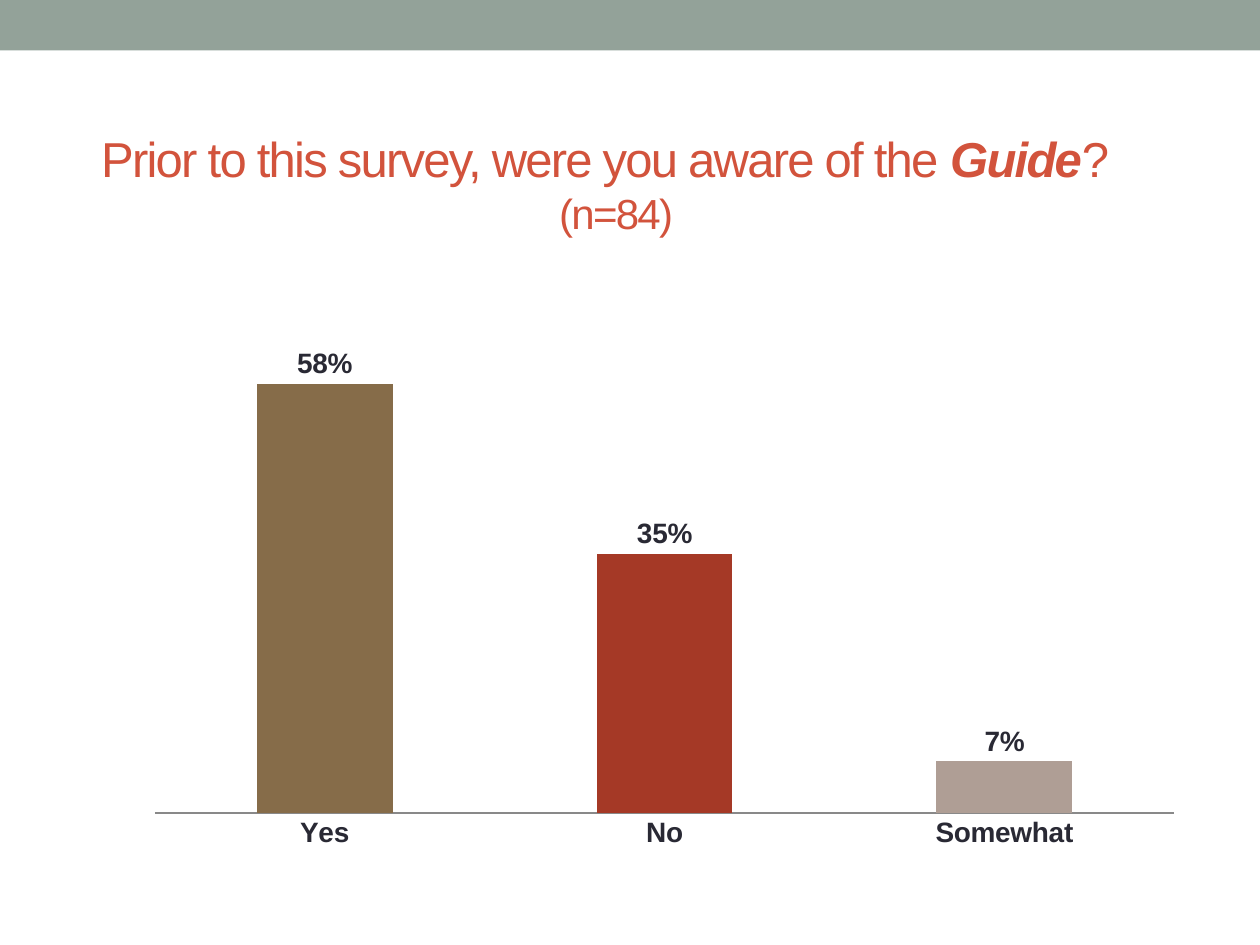
from lxml.etree import SubElement
from pptx import Presentation
from pptx.chart.data import CategoryChartData
from pptx.dml.color import RGBColor
from pptx.enum.chart import XL_CHART_TYPE, XL_LABEL_POSITION, XL_TICK_MARK
from pptx.enum.shapes import MSO_SHAPE
from pptx.enum.text import MSO_ANCHOR, MSO_AUTO_SIZE, PP_ALIGN
from pptx.oxml.ns import qn
from pptx.util import Inches, Pt


def color(hex_value):
    return RGBColor.from_string(hex_value)


def apply(target, **values):
    for name, value in values.items():
        setattr(target, name, value)


class SlideBuilder:
    font_name = "Arial"
    text_color = "292934"
    title_color = "D2533C"
    band_color = "93A299"
    axis_color = "898989"

    def __init__(self, slide):
        self.slide = slide

    def style_font(self, font, hex_value, size, **values):
        apply(font, name=self.font_name, size=Pt(size), **values)
        font.color.rgb = color(hex_value)

    def add_band(self, left, top, width, height):
        band = self.slide.shapes.add_shape(
            MSO_SHAPE.RECTANGLE, *map(Inches, (left, top, width, height)))
        band.shadow.inherit = False
        band.fill.solid()
        band.fill.fore_color.rgb = color(self.band_color)
        band.line.fill.background()

    def set_title(self, lines, left, top, width, height):
        """Each line is a list of (text, size, emphasis) pieces."""
        title = self.slide.shapes.title
        apply(title, left=Inches(left), top=Inches(top),
              width=Inches(width), height=Inches(height))
        apply(title.text_frame, word_wrap=True, auto_size=MSO_AUTO_SIZE.NONE,
              vertical_anchor=MSO_ANCHOR.MIDDLE)
        paragraph = title.text_frame.paragraphs[0]
        paragraph.alignment = PP_ALIGN.CENTER
        for index, line in enumerate(lines):
            if index:
                paragraph.add_line_break()
            for text, size, emphasis in line:
                run = paragraph.add_run()
                run.text = text
                self.style_font(run.font, self.title_color, size,
                                bold=emphasis, italic=emphasis)
                run.font._element.set("spc", "-100")

    def add_column_chart(self, values, point_colors, left, top, width, height):
        chart_data = CategoryChartData(number_format="0%")
        chart_data.categories = list(values)
        chart_data.add_series("Series 1", list(values.values()))
        chart = self.slide.shapes.add_chart(
            XL_CHART_TYPE.COLUMN_CLUSTERED,
            *map(Inches, (left, top, width, height)), chart_data).chart
        apply(chart, has_legend=False, has_title=False)
        self.style_font(chart.font, self.text_color, 10)

        # Axes
        apply(chart.value_axis, visible=False, has_major_gridlines=False,
              minimum_scale=0, maximum_scale=0.7)
        category_axis = chart.category_axis
        apply(category_axis, major_tick_mark=XL_TICK_MARK.NONE,
              minor_tick_mark=XL_TICK_MARK.NONE, has_major_gridlines=False)
        self.style_font(category_axis.tick_labels.font, self.text_color, 16, bold=True)
        category_axis.format.line.color.rgb = color(self.axis_color)
        category_axis.format.line.width = Pt(0.75)

        # Columns and their labels
        plot = chart.plots[0]
        apply(plot, gap_width=150, overlap=-25, vary_by_categories=False,
              has_data_labels=True)
        apply(plot.data_labels, show_value=True, number_format="0%",
              number_format_is_linked=False, position=XL_LABEL_POSITION.OUTSIDE_END)
        self.style_font(plot.data_labels.font, self.text_color, 16, bold=True)
        series = plot.series[0]
        series.format.fill.solid()
        series.format.fill.fore_color.rgb = color(self.band_color)
        for index, hex_value in enumerate(point_colors):
            fill = series.points[index].format.fill
            fill.solid()
            fill.fore_color.rgb = color(hex_value)
        self.place_plot(chart, x=0.02, y=0.02, w=0.96, h=0.9)

    def place_plot(self, chart, **fractions):
        plot_area = chart._chartSpace.chart.plotArea
        for old_layout in plot_area.findall(qn("c:layout")):
            plot_area.remove(old_layout)
        layout = SubElement(plot_area, qn("c:layout"))
        plot_area.insert(0, layout)
        manual = SubElement(layout, qn("c:manualLayout"))
        settings = {"layoutTarget": "inner", "xMode": "edge", "yMode": "edge", **fractions}
        for name, value in settings.items():
            SubElement(manual, qn(f"c:{name}")).set("val", str(value))


def main():
    presentation = Presentation()
    apply(presentation, slide_width=Inches(10), slide_height=Inches(7.5))
    slide = presentation.slides.add_slide(presentation.slide_layouts[5])
    builder = SlideBuilder(slide)

    # Top band and question
    builder.add_band(0, 0, 10, 0.4)
    builder.set_title(
        [[("Prior to this survey, were you aware of the ", 28, False),
          ("Guide", 28, True), ("? ", 28, False)],
         [(" (n=84)", 24, False)]],
        0.2, 0.58, 9.3, 1.75)

    # Answers
    builder.add_column_chart(
        {"Yes": 0.58, "No": 0.35, "Somewhat": 0.07},
        ["866C49", "A53926", "AF9E95"],
        1.06, 2.25, 8.43, 4.57)

    presentation.save("out.pptx")


if __name__ == "__main__":
    main()
